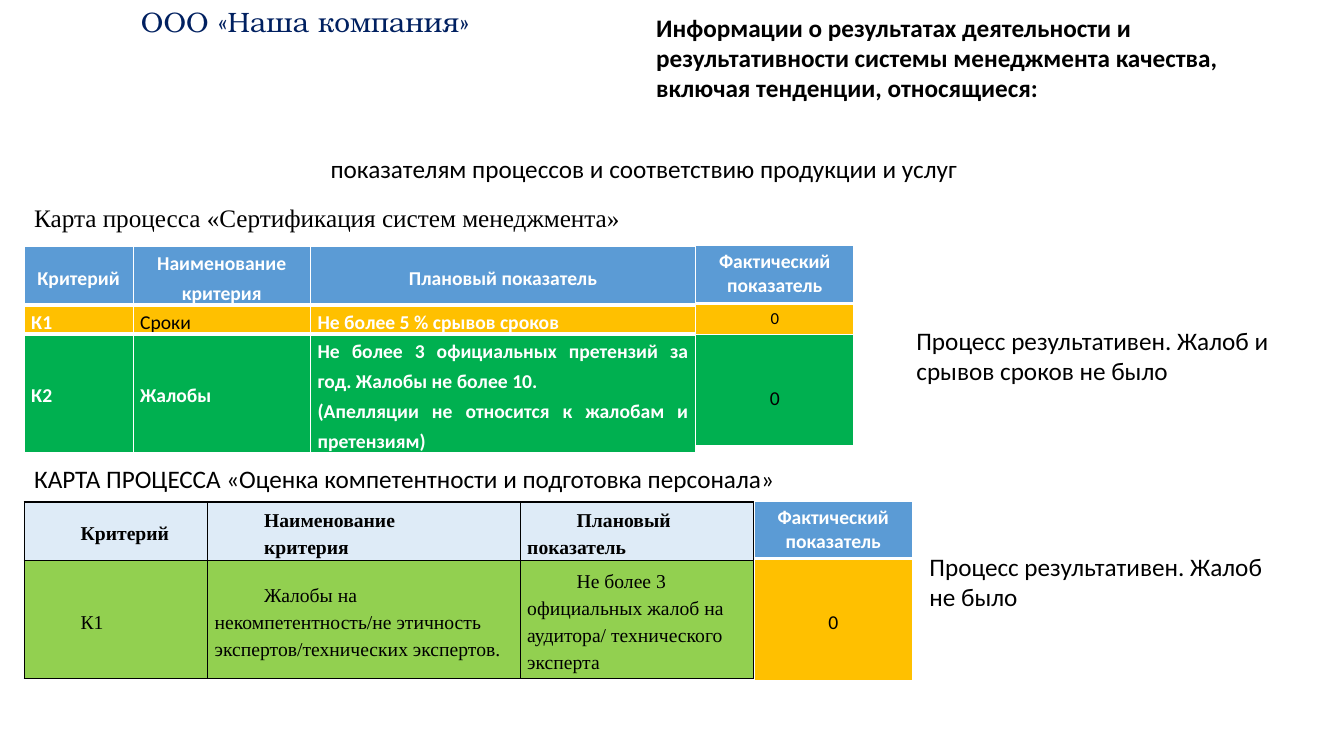
from pptx import Presentation, util as u
from pptx.dml.color import RGBColor
from pptx.enum import text as t
from pptx.oxml import parse_xml
from pptx.oxml.ns import nsdecls

THEME = {
    "sans": "Calibri", "serif": "Times New Roman", "brand": "TeX Gyre Bonum",
    "black": "000000", "white": "FFFFFF", "navy": "002060",
    "blue": "5B9BD5", "pale": "DEEBF7", "amber": "FFC000",
    "green": "00B050", "lime": "92D050",
    "title": 20, "body": 18, "cell": 14, "small": 12,
}
LEFT, CENTER, JUST = t.PP_ALIGN.LEFT, t.PP_ALIGN.CENTER, t.PP_ALIGN.JUSTIFY

# Slide and its grid: 133.3 columns by 75 rows
deck = Presentation()
deck.slide_width, deck.slide_height = u.Inches(13.33), u.Inches(7.5)
slide = deck.slides.add_slide(deck.slide_layouts[6])
col, row = deck.slide_width / 133.3, deck.slide_height / 75


def write(frame, words, face, size, ink, bold=False):
    frame.text = words
    for para in frame.paragraphs:
        for run in para.runs:
            font = run.font
            font.name, font.size, font.bold = THEME[face], u.Pt(THEME[size]), bold
            font.color.rgb = RGBColor.from_string(THEME[ink])


def draw_table(x, y, wide, high, face, line, lines, tight):
    """Each line: fill, top and bottom border in points, then its cells."""
    table = slide.shapes.add_table(
        len(high), len(wide), int(x * col), int(y * row),
        int(sum(wide) * col), int(sum(high) * row)).table
    for item, size in zip(table.columns, wide):
        item.width = int(size * col)
    for item, size in zip(table.rows, high):
        item.height = int(size * row)
    for r, (fill, top, bottom, cells) in enumerate(lines):
        for c, (words, size, ink, bold, align, indent, drop) in enumerate(cells):
            cell = table.cell(r, c)
            props = cell._tc.get_or_add_tcPr()
            for side, weight in zip("LRTB", (1, 1, top, bottom)):
                props.append(parse_xml(
                    f'<a:ln{side} {nsdecls("a")} w="{u.Pt(weight)}"><a:solidFill>'
                    f'<a:srgbClr val="{THEME[line]}"/></a:solidFill></a:ln{side}>'))
            cell.fill.solid()
            cell.fill.fore_color.rgb = RGBColor.from_string(THEME[fill])
            if tight:
                cell.vertical_anchor = t.MSO_ANCHOR.MIDDLE
                cell.margin_left = cell.margin_right = int(0.7 * col)
                cell.margin_top = cell.margin_bottom = 0
            elif drop:
                cell.margin_top = int(drop * row)
            write(cell.text_frame, words, face, size, ink, bold)
            for para in cell.text_frame.paragraphs:
                para.alignment = align
                if tight:
                    para.line_spacing = 1.25
                if indent:
                    para._p.get_or_add_pPr().set("indent", str(int(indent * col)))


# Headings, captions and conclusions
for x, y, w, h, words, face, size, ink, bold, wrap in (
    (13, 0, 35.9, 4.4, "ООО «Наша компания»", "brand", "title", "navy", False, False),
    (64.1, 0.7, 66.7, 10.1, "Информации о результатах деятельности и результативности "
     "системы менеджмента качества, включая тенденции, относящиеся:",
     "sans", "body", "black", True, True),
    (31.8, 14.7, 64.9, 4, "показателям процессов и соответствию продукции и услуг",
     "sans", "body", "black", False, False),
    (2.4, 19.6, 60.7, 4, "Карта процесса «Сертификация систем менеджмента»",
     "serif", "body", "black", False, False),
    (89.9, 31.8, 40.8, 7.1, "Процесс результативен. Жалоб и срывов сроков не было",
     "sans", "body", "black", False, True),
    (2.4, 45.5, 119, 4, "КАРТА ПРОЦЕССА «Оценка компетентности и подготовка персонала»",
     "sans", "body", "black", False, True),
    (91.2, 54.2, 36.8, 7.1, "Процесс результативен. Жалоб не было",
     "sans", "body", "black", False, True),
):
    box = slide.shapes.add_textbox(int(x * col), int(y * row), int(w * col), int(h * row))
    box.text_frame.word_wrap = wrap
    box.text_frame.auto_size = t.MSO_AUTO_SIZE.SHAPE_TO_FIT_TEXT
    write(box.text_frame, words, face, size, ink, bold)

# Cell looks: size, ink, bold, alignment, indent, drop from the top
head = ("cell", "white", True, CENTER, 0, 0)
strong = ("cell", "white", True, JUST, 0, 0)
plain = ("cell", "black", False, JUST, 0, 0)
mark = ("small", "black", False, CENTER, 0, 0)
low = ("cell", "black", False, CENTER, 0, 5.2)
label = ("cell", "black", True, LEFT, 4.9, 0)
entry = ("cell", "black", False, LEFT, 4.9, 0)
actual = ("blue", 1, 3, [("Фактический показатель", *head)])

# Certification process: plan and actual
draw_table(2.4, 24.4, (10.8, 17.6, 38.2), (5.8, 2.9, 11.7), "sans", "white", [
    ("blue", 1, 3, [(words, *head) for words in (
        "Критерий", "Наименование\nкритерия", "Плановый показатель")]),
    ("amber", 1, 1, [("К1", *strong), ("Сроки", *plain),
                     ("Не более 5 % срывов сроков", *strong)]),
    ("green", 3, 1, [(words, *strong) for words in (
        "К2", "Жалобы",
        "Не более 3 официальных претензий за год. Жалобы не более 10.\n"
        "(Апелляции не относится к жалобам и претензиям)")]),
], True)
draw_table(69, 24.3, (15.7,), (5.8, 3.1, 11), "sans", "white", [
    actual, ("amber", 1, 1, [("0", *mark)]), ("green", 1, 1, [("0", *low)]),
], False)

# Staff competence process: plan and actual
draw_table(2.4, 49.8, (18.2, 31, 23.2), (5.8, 11.7), "serif", "black", [
    ("pale", 1, 1, [(words, *label) for words in (
        "Критерий", "Наименование\nкритерия", "Плановый показатель")]),
    ("lime", 1, 1, [(words, *entry) for words in (
        "К1", "Жалобы на некомпетентность/не этичность экспертов/технических экспертов.",
        "Не более 3 официальных жалоб на аудитора/ технического эксперта")]),
], True)
draw_table(74.8, 49.7, (15.7,), (5.7, 12.1), "sans", "white", [
    actual, ("amber", 1, 1, [("0", *low)]),
], False)

deck.save("out.pptx")
